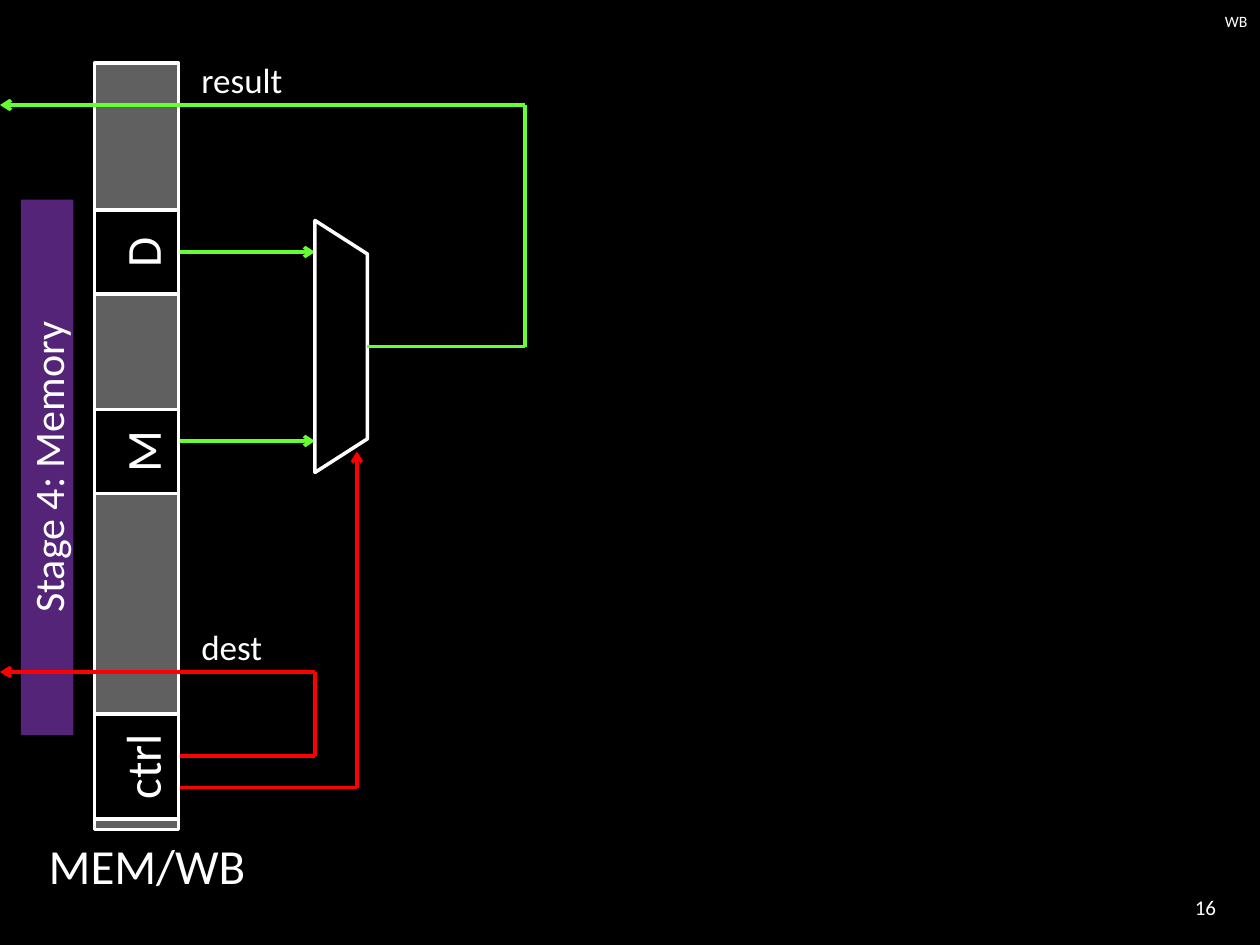
from dataclasses import dataclass

from lxml.etree import SubElement
from pptx import Presentation
from pptx.dml.color import RGBColor
from pptx.enum.shapes import MSO_CONNECTOR as Connector, MSO_SHAPE as Shape
from pptx.enum.text import MSO_ANCHOR as Anchor, PP_ALIGN as Align
from pptx.oxml.ns import qn
from pptx.util import Pt

EMU_PER_PX = 7620
BLACK, WHITE, GREY, PURPLE = "000000", "FFFFFF", "606060", "542478"
DATA, CONTROL = "66FF33", "FF0000"
REGISTER_X, REGISTER_WIDTH, REGISTER_EDGE = 130, 80, 170


@dataclass
class Block:
    """A box turned upright: centre, length along the page height, thickness."""
    x: int
    y: int
    length: int
    thickness: int
    fill: str
    text: str = ""
    size: int = 28
    outlined: bool = True
    spacing: float = 1.16


@dataclass
class Wire:
    """A straight line, with an arrowhead at its end if wanted."""
    x1: int
    y1: int
    x2: int
    y2: int
    color: str
    arrow: bool = False


@dataclass
class Label:
    """A free piece of text and its frame."""
    text: str
    x: int
    y: int
    width: int
    height: int
    size: int
    align: Align = Align.LEFT
    anchor: Anchor = Anchor.TOP


BACK_WIRES = [
    Wire(340, 750, REGISTER_EDGE, 750, CONTROL),
    Wire(300, 720, REGISTER_EDGE, 720, CONTROL),
    Wire(REGISTER_EDGE, 420, 300, 420, DATA, True),
    Wire(REGISTER_EDGE, 240, 300, 240, DATA, True),
]
BLOCKS = [
    Block(45, 445, 510, 50, PURPLE, "Stage 4: Memory", 24, False, 1.0),
    Block(REGISTER_X, 425, 730, REGISTER_WIDTH, GREY),
    Block(REGISTER_X, 730, 100, REGISTER_WIDTH, BLACK, "ctrl"),
    Block(REGISTER_X, 430, 80, REGISTER_WIDTH, BLACK, "M"),
    Block(REGISTER_X, 240, 80, REGISTER_WIDTH, BLACK, "D"),
]
MUX_POINTS = [(300, 210), (350, 242), (350, 418), (300, 450)]
FRONT_WIRES = [
    Wire(500, 100, 0, 100, DATA, True),
    Wire(350, 330, 500, 330, DATA),
    Wire(500, 100, 500, 330, DATA),
    Wire(300, 640, 0, 640, CONTROL, True),
    Wire(300, 720, 300, 640, CONTROL),
    Wire(340, 750, 340, 430, CONTROL, True),
]
TITLE = Label("WB", 740, 0, 460, 40, 9, Align.RIGHT, Anchor.MIDDLE)
LABELS = [
    Label("MEM/WB", 30, 790, 220, 68, 28, Align.CENTER),
    Label("result", 180, 50, 130, 53, 20),
    Label("dest", 180, 590, 130, 53, 20),
    Label("16", 1070, 840, 100, 48, 12, Align.RIGHT, Anchor.MIDDLE),
]


def px(*lengths: int) -> list[int]:
    """Turn px into EMU."""
    return [length * EMU_PER_PX for length in lengths]


def paint(target, color: str) -> None:
    """Give a fill a solid colour."""
    target.solid()
    target.fore_color.rgb = RGBColor.from_string(color)


def write(shape, text: str, size: int, align: Align, anchor: Anchor) -> None:
    """Put formatted white text in a shape."""
    frame = shape.text_frame
    frame.text = text
    frame.word_wrap = True
    frame.vertical_anchor = anchor
    para = frame.paragraphs[0]
    para.alignment = align
    for span in para.runs:
        span.font.name = "Calibri"
        span.font.size = Pt(size)
        paint(span.font.fill, WHITE)


def style(shape, fill: str, outlined: bool = True) -> None:
    """Set fill and outline, without shadow."""
    shape.shadow.inherit = False
    paint(shape.fill, fill)
    if outlined:
        paint(shape.line.fill, WHITE)
        shape.line.width = Pt(2)
    else:
        shape.line.fill.background()


def draw_block(page, block: Block) -> None:
    """Draw a box that reads from bottom to top."""
    left = block.x - block.length // 2
    top = block.y - block.thickness // 2
    box = page.shapes.add_shape(
        Shape.RECTANGLE, *px(left, top, block.length, block.thickness))
    box.rotation = 270
    style(box, block.fill, block.outlined)
    if block.text:
        write(box, block.text, block.size, Align.CENTER, Anchor.MIDDLE)
        box.text_frame.paragraphs[0].line_spacing = block.spacing


def draw_wire(page, wire: Wire) -> None:
    """Draw a line."""
    line = page.shapes.add_connector(
        Connector.STRAIGHT, *px(wire.x1, wire.y1, wire.x2, wire.y2))
    paint(line.line.fill, wire.color)
    line.line.width = Pt(2)
    if wire.arrow:
        SubElement(line.line._get_or_add_ln(), qn("a:tailEnd"), type="arrow")
    SubElement(line._element.spPr, qn("a:effectLst"))


def draw_mux(page) -> None:
    """Draw the multiplexer outline."""
    start, *others = MUX_POINTS
    builder = page.shapes.build_freeform(*start, scale=EMU_PER_PX)
    builder.add_line_segments(others, close=True)
    style(builder.convert_to_shape(), BLACK)


def draw_label(page, label: Label) -> None:
    """Draw a text box."""
    box = page.shapes.add_textbox(
        *px(label.x, label.y, label.width, label.height))
    write(box, label.text, label.size, label.align, label.anchor)


def place_title(page) -> None:
    """Move and format the title placeholder."""
    title = page.shapes.title
    title.left, title.top, title.width, title.height = px(
        TITLE.x, TITLE.y, TITLE.width, TITLE.height)
    write(title, TITLE.text, TITLE.size, TITLE.align, TITLE.anchor)


def main() -> None:
    """Build the slide."""
    deck = Presentation()
    deck.slide_width, deck.slide_height = px(1200, 900)
    page = deck.slides.add_slide(deck.slide_layouts[5])
    paint(page.background.fill, BLACK)
    place_title(page)
    for wire in BACK_WIRES:
        draw_wire(page, wire)
    for block in BLOCKS:
        draw_block(page, block)
    draw_mux(page)
    for wire in FRONT_WIRES:
        draw_wire(page, wire)
    for label in LABELS:
        draw_label(page, label)
    deck.save("out.pptx")


if __name__ == "__main__":
    main()
